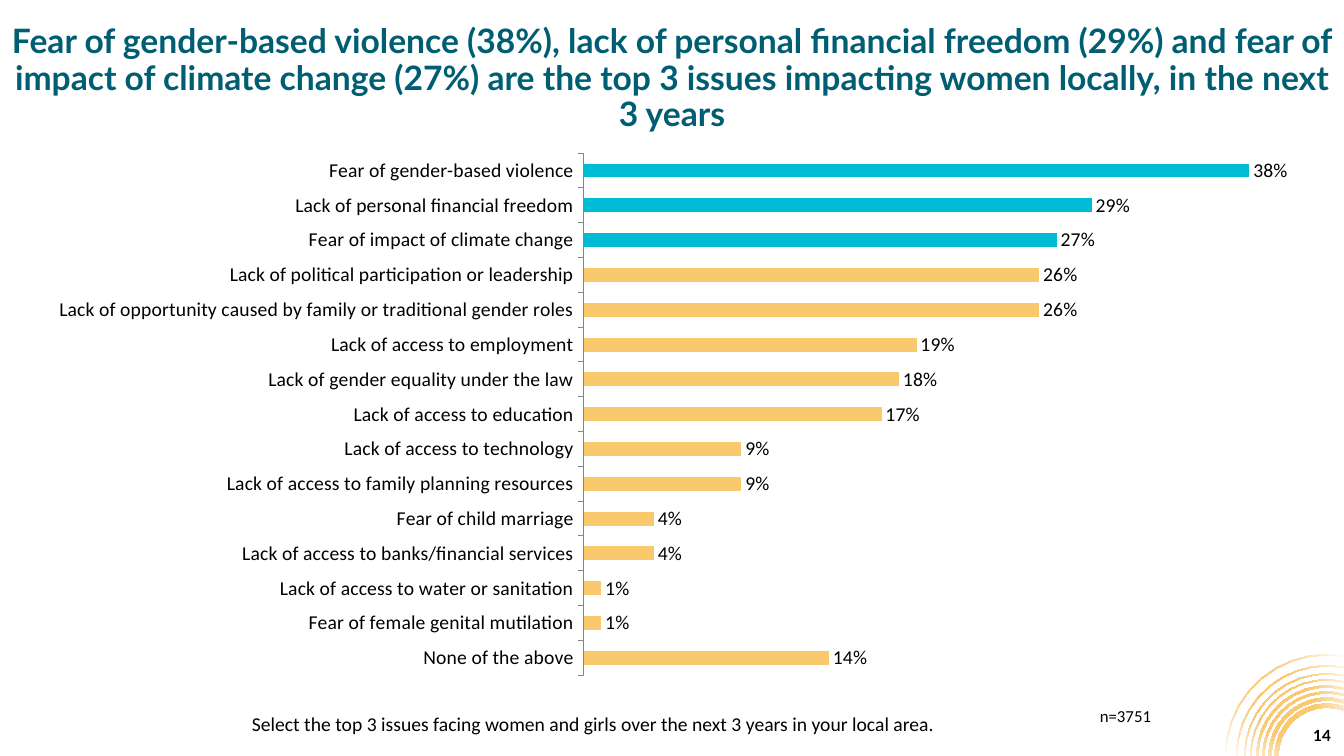
from math import acos, cos, pi, sin

from lxml import etree
from pptx import Presentation
from pptx.chart.data import CategoryChartData
from pptx.dml.color import RGBColor
from pptx.enum.chart import XL_CHART_TYPE as ChartType
from pptx.enum.chart import XL_LABEL_POSITION as LabelPosition
from pptx.enum.chart import XL_TICK_LABEL_POSITION as TickLabels
from pptx.enum.chart import XL_TICK_MARK as TickMark
from pptx.enum.text import MSO_ANCHOR as Anchor
from pptx.enum.text import MSO_AUTO_SIZE as AutoSize
from pptx.enum.text import PP_ALIGN as Align
from pptx.oxml import parse_xml
from pptx.oxml.ns import nsdecls, qn
from pptx.util import Inches, Pt

TEAL = RGBColor(0x00, 0x5E, 0x72)
CYAN = RGBColor(0x00, 0xBB, 0xD4)
YELLOW = RGBColor(0xF8, 0xC9, 0x6D)
WHITE = RGBColor(0xFF, 0xFF, 0xFF)
BLACK = RGBColor(0x00, 0x00, 0x00)
GREY = RGBColor(0x86, 0x86, 0x86)

SLIDE_WIDTH, SLIDE_HEIGHT = 13.33, 7.5
TOP_ISSUES = 3
ISSUES = [
    ("Fear of gender-based violence", 0.38),
    ("Lack of personal financial freedom", 0.29),
    ("Fear of impact of climate change", 0.27),
    ("Lack of political participation or leadership", 0.26),
    ("Lack of opportunity caused by family or traditional gender roles", 0.26),
    ("Lack of access to employment", 0.19),
    ("Lack of gender equality under the law", 0.18),
    ("Lack of access to education", 0.17),
    ("Lack of access to technology", 0.09),
    ("Lack of access to family planning resources", 0.09),
    ("Fear of child marriage", 0.04),
    ("Lack of access to banks/financial services", 0.04),
    ("Lack of access to water or sanitation", 0.01),
    ("Fear of female genital mutilation", 0.01),
    ("None of the above", 0.14),
]
CHART_BOX = (0.34, 1.41, 12.66, 5.4)
PLOT_BOX = (5.79, 1.52, 6.95, 5.18)

RING_CENTRE_X = 13.16
RING_RADII = [(0.52, 0.48), (0.58, 0.55), (0.64, 0.62), (0.7, 0.68),
              (0.76, 0.75), (0.82, 0.81), (0.9, 0.89), (1.01, 1.0)]
ARC_STEPS = 10


def set_format(target, values):
    for name, value in values.items():
        setattr(target, name, value)


def set_font(font, color=BLACK, **values):
    set_format(font, values)
    font.color.rgb = color


def add_text(slide, box, text, font, frame_format, paragraph_format=None):
    frame = slide.shapes.add_textbox(*map(Inches, box)).text_frame
    set_format(frame, {"word_wrap": True, **frame_format})
    paragraph = frame.paragraphs[0]
    set_format(paragraph, paragraph_format or {})
    run = paragraph.add_run()
    run.text = text
    set_font(run.font, **font)


def arc_points(radius):
    """Points from the slide's bottom edge, over the top, to its right edge."""
    end = acos((SLIDE_WIDTH - RING_CENTRE_X) / radius)
    angles = [pi + (end - pi) * step / ARC_STEPS for step in range(ARC_STEPS + 1)]
    return [(Inches(RING_CENTRE_X + radius * cos(angle)),
             Inches(SLIDE_HEIGHT - radius * sin(angle))) for angle in angles]


def add_corner_rings(slide):
    bands = [arc_points(outer) + arc_points(inner)[::-1]
             for outer, inner in RING_RADII]
    first, *others = bands
    builder = slide.shapes.build_freeform(*first[0])
    builder.add_line_segments(first[1:], close=True)
    for band in others:
        builder.move_to(*band[0])
        builder.add_line_segments(band[1:], close=True)
    rings = builder.convert_to_shape()
    rings.shadow.inherit = False
    rings.line.fill.background()
    rings.fill.background()
    no_fill = rings.element.spPr.find(qn("a:noFill"))
    no_fill.getparent().replace(no_fill, parse_xml(
        f'<a:gradFill {nsdecls("a")} rotWithShape="1"><a:gsLst>'
        f'<a:gs pos="37000"><a:srgbClr val="{YELLOW}"/></a:gs>'
        f'<a:gs pos="100000"><a:srgbClr val="{WHITE}"/></a:gs></a:gsLst>'
        '<a:path path="circle"><a:fillToRect l="50000" t="50000" r="50000" '
        'b="50000"/></a:path></a:gradFill>'))


def set_plot_layout(chart):
    """Fix the inner plot area, as fractions of the chart."""
    chart_left, chart_top, chart_width, chart_height = CHART_BOX
    left, top, width, height = PLOT_BOX
    settings = {"layoutTarget": "inner", "xMode": "edge", "yMode": "edge",
                "x": (left - chart_left) / chart_width,
                "y": (top - chart_top) / chart_height,
                "w": width / chart_width, "h": height / chart_height}
    plot_area = chart.element.find(f".//{qn('c:plotArea')}")
    for old in plot_area.findall(qn("c:layout")):
        plot_area.remove(old)
    layout = etree.Element(qn("c:layout"))
    manual = etree.SubElement(layout, qn("c:manualLayout"))
    for tag, value in settings.items():
        etree.SubElement(manual, qn(f"c:{tag}"), val=str(value))
    plot_area.insert(0, layout)


def add_issue_chart(slide):
    data = CategoryChartData(number_format="0%")
    bottom_up = ISSUES[::-1]
    data.categories = [issue for issue, share in bottom_up]
    data.add_series("Series 1", [share for issue, share in bottom_up])
    chart = slide.shapes.add_chart(
        ChartType.BAR_CLUSTERED, *map(Inches, CHART_BOX), data).chart
    set_format(chart, {"has_legend": False, "has_title": False})
    set_font(chart.font, name="Calibri", size=Pt(18))
    set_plot_layout(chart)

    issue_axis = chart.category_axis
    set_format(issue_axis, {
        "major_tick_mark": TickMark.OUTSIDE, "minor_tick_mark": TickMark.NONE,
        "tick_label_position": TickLabels.LOW, "has_major_gridlines": False})
    set_font(issue_axis.tick_labels.font, name="Calibri", size=Pt(14))
    set_format(issue_axis.format.line, {"width": Pt(0.75)})
    issue_axis.format.line.color.rgb = GREY
    set_format(chart.value_axis, {
        "visible": False, "has_major_gridlines": False,
        "minimum_scale": 0, "maximum_scale": 0.4})

    plot = chart.plots[0]
    set_format(plot, {"gap_width": 150, "vary_by_categories": False})
    shares = plot.series[0]
    set_format(shares.data_labels, {
        "show_value": True, "position": LabelPosition.OUTSIDE_END,
        "number_format": "0%", "number_format_is_linked": False})
    set_font(shares.data_labels.font, name="Calibri", size=Pt(14))

    shares.format.fill.solid()
    shares.format.fill.fore_color.rgb = YELLOW
    for index in range(len(ISSUES) - TOP_ISSUES, len(ISSUES)):
        top_fill = shares.points[index].format.fill
        top_fill.solid()
        top_fill.fore_color.rgb = CYAN


def main():
    deck = Presentation()
    set_format(deck, {"slide_width": Inches(SLIDE_WIDTH),
                      "slide_height": Inches(SLIDE_HEIGHT)})
    slide = deck.slides.add_slide(deck.slide_layouts[6])
    middle = {"vertical_anchor": Anchor.MIDDLE}
    grow = {"auto_size": AutoSize.SHAPE_TO_FIT_TEXT}

    add_corner_rings(slide)
    add_text(slide, (10.3, 7.18, 3, 0.24), "14",
             {"name": "Lato", "size": Pt(11), "bold": True},
             middle, {"alignment": Align.RIGHT})
    add_text(slide, (0, 0.4, SLIDE_WIDTH, 0.77),
             "Fear of gender-based violence (38%), lack of personal financial "
             "freedom (29%) and fear of impact of climate change (27%) are the "
             "top 3 issues impacting women locally, in the next 3 years",
             {"name": "Lato", "size": Pt(24), "bold": True, "color": TEAL},
             middle, {"alignment": Align.CENTER, "line_spacing": 0.9})
    add_issue_chart(slide)
    add_text(slide, (2.4, 7.01, 7.25, 0.34),
             "Select the top 3 issues facing women and girls over the next "
             "3 years in your local area.",
             {"name": "Calibri", "size": Pt(14)}, grow)
    add_text(slide, (10.81, 6.95, 1.48, 0.3), "n=3751",
             {"name": "Calibri", "size": Pt(12)}, grow)
    deck.save("out.pptx")


if __name__ == "__main__":
    main()
